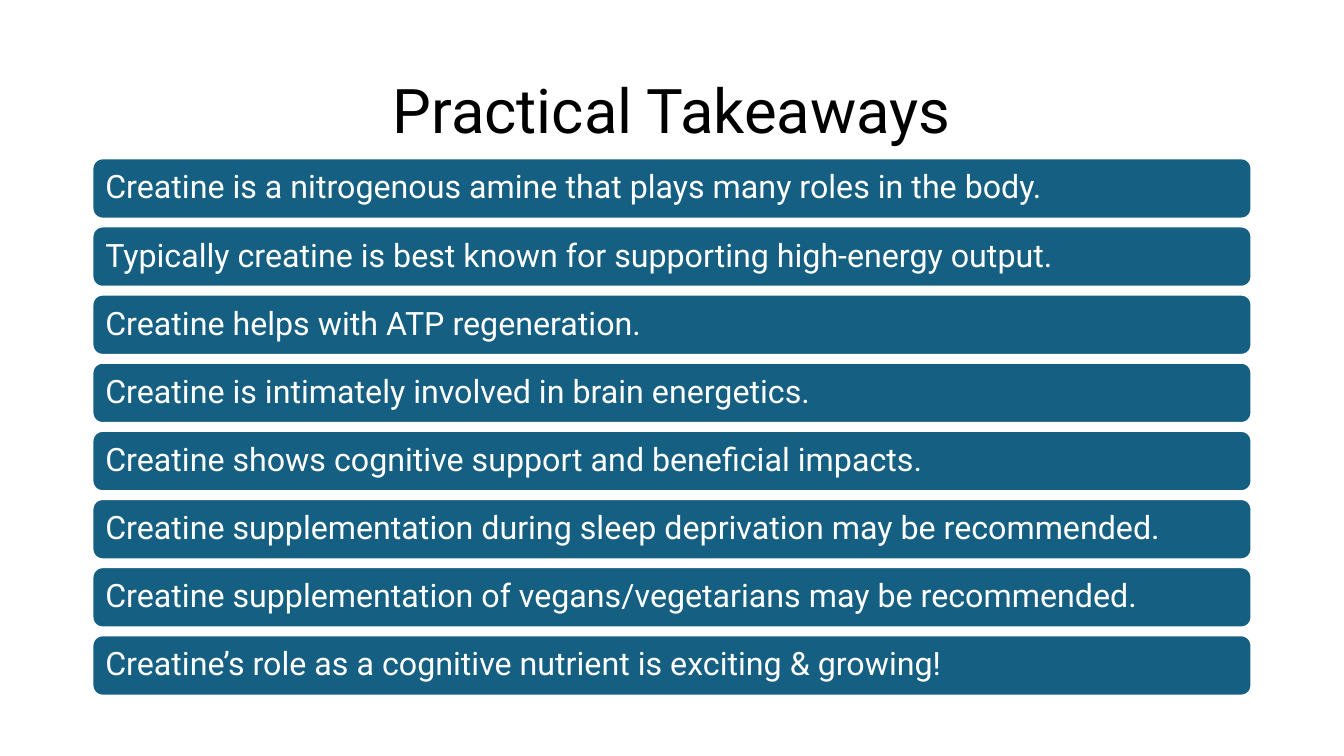
from dataclasses import dataclass

from pptx import Presentation
from pptx.dml.color import RGBColor
from pptx.enum.shapes import MSO_SHAPE as Shape
from pptx.enum.text import MSO_ANCHOR as Anchor, PP_ALIGN as Align
from pptx.util import Cm, Pt

BLACK = RGBColor(0x00, 0x00, 0x00)
WHITE = RGBColor(0xFF, 0xFF, 0xFF)
TEAL = RGBColor(0x15, 0x60, 0x82)

# Column of bars, in cm
LEFT, WIDTH, BAR_HEIGHT = 2.33, 29.21, 1.52
FIRST_TOP, LAST_TOP = 3.99, 16.01
INSET = 0.25

TAKEAWAYS = [
    "Creatine is a nitrogenous amine that plays many roles in the body.",
    "Typically creatine is best known for supporting high-energy output.",
    "Creatine helps with ATP regeneration.",
    "Creatine is intimately involved in brain energetics.",
    "Creatine shows cognitive support and beneficial impacts.",
    "Creatine supplementation during sleep deprivation may be recommended.",
    "Creatine supplementation of vegans/vegetarians may be recommended.",
    "Creatine’s role as a cognitive nutrient is exciting & growing!",
]


@dataclass
class Bar:
    text: str
    top: float


def write(tf, text: str, size: int, color: RGBColor, align: Align) -> None:
    tf.word_wrap = True
    tf.vertical_anchor = Anchor.MIDDLE
    p = tf.paragraphs[0]
    p.alignment, p.line_spacing = align, 0.9
    r = p.add_run()
    r.text = text
    for name, value in {"name": "Roboto", "size": Pt(size)}.items():
        setattr(r.font, name, value)
    r.font.color.rgb = color


def draw_bar(s, bar: Bar) -> None:
    sp = s.shapes.add_shape(Shape.ROUNDED_RECTANGLE, Cm(LEFT), Cm(bar.top),
                            Cm(WIDTH), Cm(BAR_HEIGHT))
    sp.shadow.inherit = False
    sp.fill.solid()
    sp.fill.fore_color.rgb = TEAL
    sp.line.color.rgb = WHITE
    sp.line.width = Pt(1.5)
    tf = sp.text_frame
    for side in ("left", "top", "right", "bottom"):
        setattr(tf, f"margin_{side}", Cm(INSET))
    write(tf, bar.text, 23, WHITE, Align.LEFT)


def main() -> None:
    prs = Presentation()
    prs.slide_width, prs.slide_height = Cm(33.87), Cm(19.05)
    s = prs.slides.add_slide(prs.slide_layouts[5])

    # Title
    title = s.shapes.title
    box = {"left": LEFT, "top": 1.01, "width": WIDTH, "height": 3.68}
    for name, value in box.items():
        setattr(title, name, Cm(value))
    write(title.text_frame, "Practical Takeaways", 44, BLACK, Align.CENTER)

    # Evenly spaced takeaway bars
    pitch = (LAST_TOP - FIRST_TOP) / (len(TAKEAWAYS) - 1)
    for i, text in enumerate(TAKEAWAYS):
        draw_bar(s, Bar(text, FIRST_TOP + i * pitch))

    prs.save("out.pptx")


if __name__ == "__main__":
    main()
